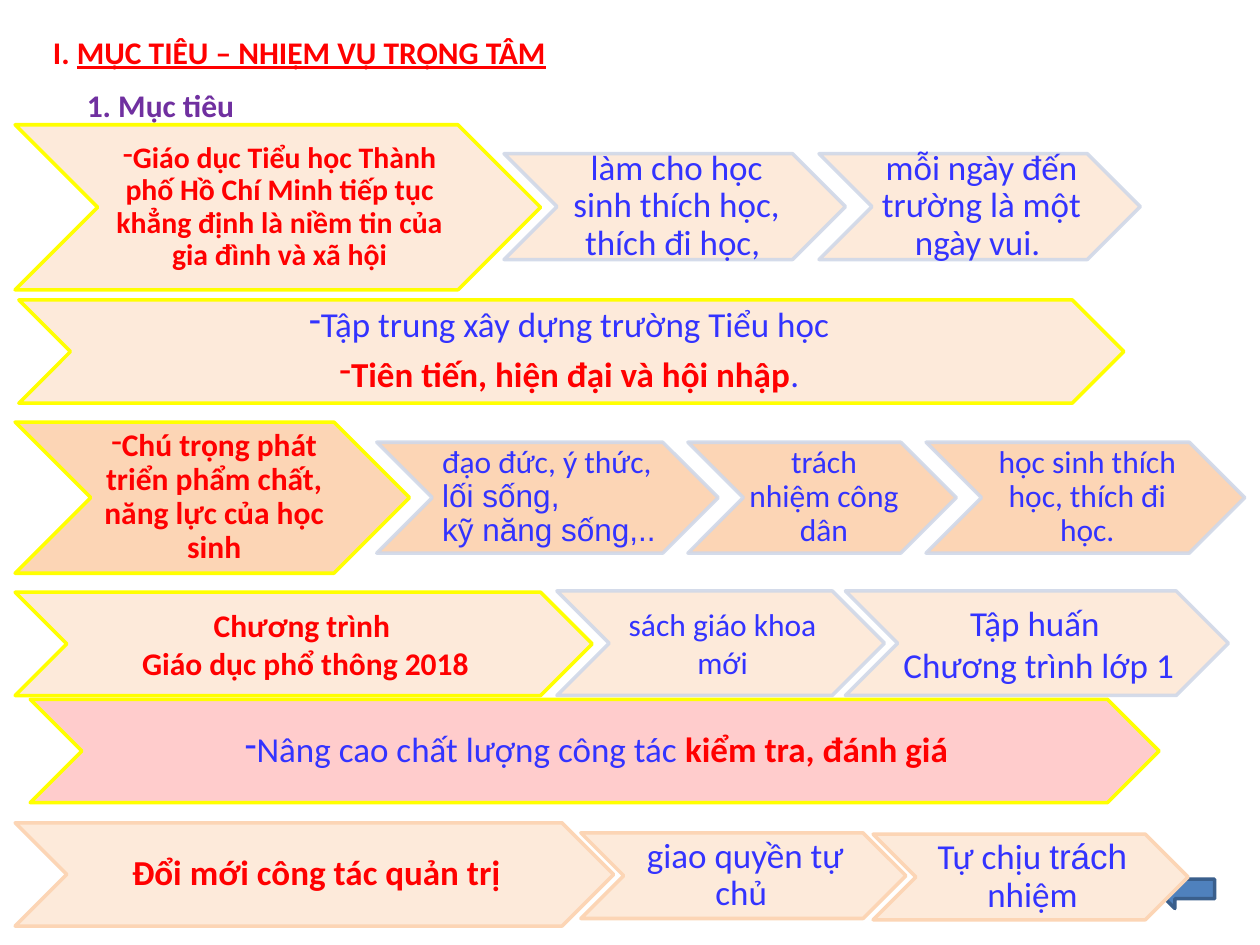
from pptx import Presentation
from pptx.dml.color import RGBColor
from pptx.enum.shapes import MSO_SHAPE
from pptx.enum.text import MSO_ANCHOR, MSO_AUTO_SIZE, PP_ALIGN
from pptx.oxml.ns import qn
from pptx.util import Inches, Pt
from lxml import etree

CHEVRON, LEFT_ARROW = MSO_SHAPE.CHEVRON, MSO_SHAPE.LEFT_ARROW
TOP, MIDDLE = MSO_ANCHOR.TOP, MSO_ANCHOR.MIDDLE
LEFT, CENTER = PP_ALIGN.LEFT, PP_ALIGN.CENTER
FIT_SHAPE, NO_FIT = MSO_AUTO_SIZE.SHAPE_TO_FIT_TEXT, MSO_AUTO_SIZE.NONE

RED, BLUE, PURPLE = "FF0000", "3333FF", "7030A0"
CREAM, PEACH, PINK = "FDEADA", "FCD5B5", "FFCCCC"
YELLOW, PALE = "FFFF00", "D0D8E8"


def rgb(value):
    return RGBColor.from_string(value)


def run(text, **fmt):
    return text, fmt


def red(text):
    return run(text, color=RED, bold=True)


def blue(text, font="Calibri"):
    return run(text, color=BLUE, font=font)


def add_runs(p, runs, size):
    """Fill a paragraph; a newline in a run becomes a line break."""
    for text, fmt in runs:
        for i, part in enumerate(text.split("\n")):
            if i:
                p.add_line_break()
            r = p.add_run()
            r.text = part
            r.font.size = Pt(size)
            r.font.name = fmt.get("font", "Calibri")
            r.font.bold = fmt.get("bold", False)
            r.font.underline = fmt.get("underline", False)
            r.font.color.rgb = rgb(fmt["color"])


class Deck:
    def __init__(self):
        self.prs = Presentation()
        self.prs.slide_width, self.prs.slide_height = Inches(10), Inches(7.5)
        self.s = self.prs.slides.add_slide(self.prs.slide_layouts[5])

    def heading(self, sp, at, runs):
        sp.left, sp.top, sp.width, sp.height = map(Inches, at)
        tf = sp.text_frame
        tf.word_wrap = False
        tf.auto_size = FIT_SHAPE
        tf.vertical_anchor = TOP
        p = tf.paragraphs[0]
        p.alignment = LEFT
        add_runs(p, runs, 18)

    def title(self, at, runs):
        self.heading(self.s.shapes.title, at, runs)

    def label(self, at, runs):
        self.heading(self.s.shapes.add_textbox(0, 0, 0, 0), at, runs)

    def shape(self, kind, at, fill, line):
        sp = self.s.shapes.add_shape(kind, *map(Inches, at))
        sp.shadow.inherit = False
        sp.fill.solid()
        sp.fill.fore_color.rgb = rgb(fill)
        sp.line.color.rgb = rgb(line)
        sp.line.width = Pt(2)
        return sp

    def chevron(self, at, paragraphs, size, fill=CREAM, line=PALE,
                bullet=False, tight=True, align=CENTER, margin=0.03):
        """Tight text has 90% line spacing and a gap after each paragraph."""
        sp = self.shape(CHEVRON, at, fill, line)
        if line == PALE:
            color = sp.line._ln.find(".//" + qn("a:srgbClr"))
            etree.SubElement(color, qn("a:alpha"), val="90000")
        tf = sp.text_frame
        tf.word_wrap = True
        tf.auto_size = NO_FIT
        tf.vertical_anchor = MIDDLE
        tf.margin_left, tf.margin_right = Inches(margin), 0
        tf.margin_top = tf.margin_bottom = Inches(0.01)
        for i, runs in enumerate(paragraphs):
            p = tf.add_paragraph() if i else tf.paragraphs[0]
            p.alignment = align
            if tight:
                p.line_spacing = 0.9
                p.space_after = Pt(0.35 * size)
            if bullet:
                pPr = p._p.get_or_add_pPr()
                pPr.set("marL", "0")
                pPr.set("indent", "0")
                etree.SubElement(pPr, qn("a:buChar"), char="-")
            add_runs(p, runs, size)


def main():
    d = Deck()
    d.title((0.32, 0.21, 4.9, 0.4),
            [run("I. ", color=RED, bold=True),
             run("MỤC TIÊU – NHIỆM VỤ TRỌNG TÂM", color=RED, bold=True,
                 underline=True)])
    d.label((0.59, 0.63, 1.51, 0.4),
            [run("1. Mục tiêu", color=PURPLE, bold=True)])
    d.shape(LEFT_ARROW, (9.17, 6.9, 0.47, 0.31), "4F81BD", "3A5F8C")

    # Belief of families and society
    d.chevron((0.12, 0.99, 4.17, 1.31),
              [[red("Giáo dục Tiểu học Thành phố Hồ Chí Minh tiếp tục "
                    "khẳng định là niềm tin của gia đình và xã hội")]],
              17, line=YELLOW, bullet=True)
    for x, w, text in [(4, 2.71, "làm cho học sinh thích học, thích đi học, "),
                       (6.5, 2.55, "mỗi ngày đến trường là một ngày vui. ")]:
        d.chevron((x, 1.22, w, 0.84), [[blue(text)]], 20)

    # Advanced, modern schools
    d.chevron((0.15, 2.38, 8.77, 0.82),
              [[blue("Tập trung xây dựng trường Tiểu học ")],
               [red("Tiên tiến, hiện đại và hội nhập"), blue(". ")]],
              20, line=YELLOW, bullet=True)

    # Qualities and abilities
    d.chevron((0.12, 3.35, 3.13, 1.2),
              [[red("Chú trọng phát triển phẩm chất, năng lực của học sinh")]],
              18, fill=PEACH, line=YELLOW, bullet=True)
    d.chevron((2.99, 3.51, 2.71, 0.88),
              [[blue("đạo đức, ý thức, \n"),
                blue("lối sống,\nkỹ năng sống,..", font="Arial")]],
              18, fill=PEACH, align=LEFT, margin=0.08)
    for x, w, text in [(5.46, 2.13, "trách nhiệm công dân"),
                       (7.35, 2.53, "học sinh thích học, thích đi học.")]:
        d.chevron((x, 3.51, w, 0.88), [[blue(text)]], 18, fill=PEACH)

    # Curriculum and textbooks
    d.chevron((0.12, 4.7, 4.58, 0.82),
              [[red("Chương trình ")], [red("Giáo dục phổ thông 2018")]],
              18, line=YELLOW, tight=False)
    d.chevron((4.42, 4.69, 2.6, 0.83), [[blue("sách giáo khoa mới")]],
              18, tight=False)
    d.chevron((6.71, 4.69, 3.04, 0.83),
              [[blue("Tập huấn ")], [blue("Chương trình lớp 1")]],
              20, tight=False)

    # Assessment
    d.chevron((0.24, 5.55, 8.96, 0.82),
              [[blue("Nâng cao chất lượng công tác "),
                red("kiểm tra, đánh giá")]],
              20, fill=PINK, line=YELLOW, bullet=True)

    # Governance
    for at, runs in [
        ((0.12, 6.53, 4.75, 0.82), [red("Đổi mới công tác quản trị")]),
        ((4.61, 6.61, 2.58, 0.68), [blue("giao quyền tự chủ ")]),
        ((6.93, 6.62, 2.5, 0.68),
         [blue("Tự chịu "), blue("trách ", font="Arial"), blue("nhiệm")]),
    ]:
        d.chevron(at, [runs], 20, line=PEACH)

    d.prs.save("out.pptx")


if __name__ == "__main__":
    main()
